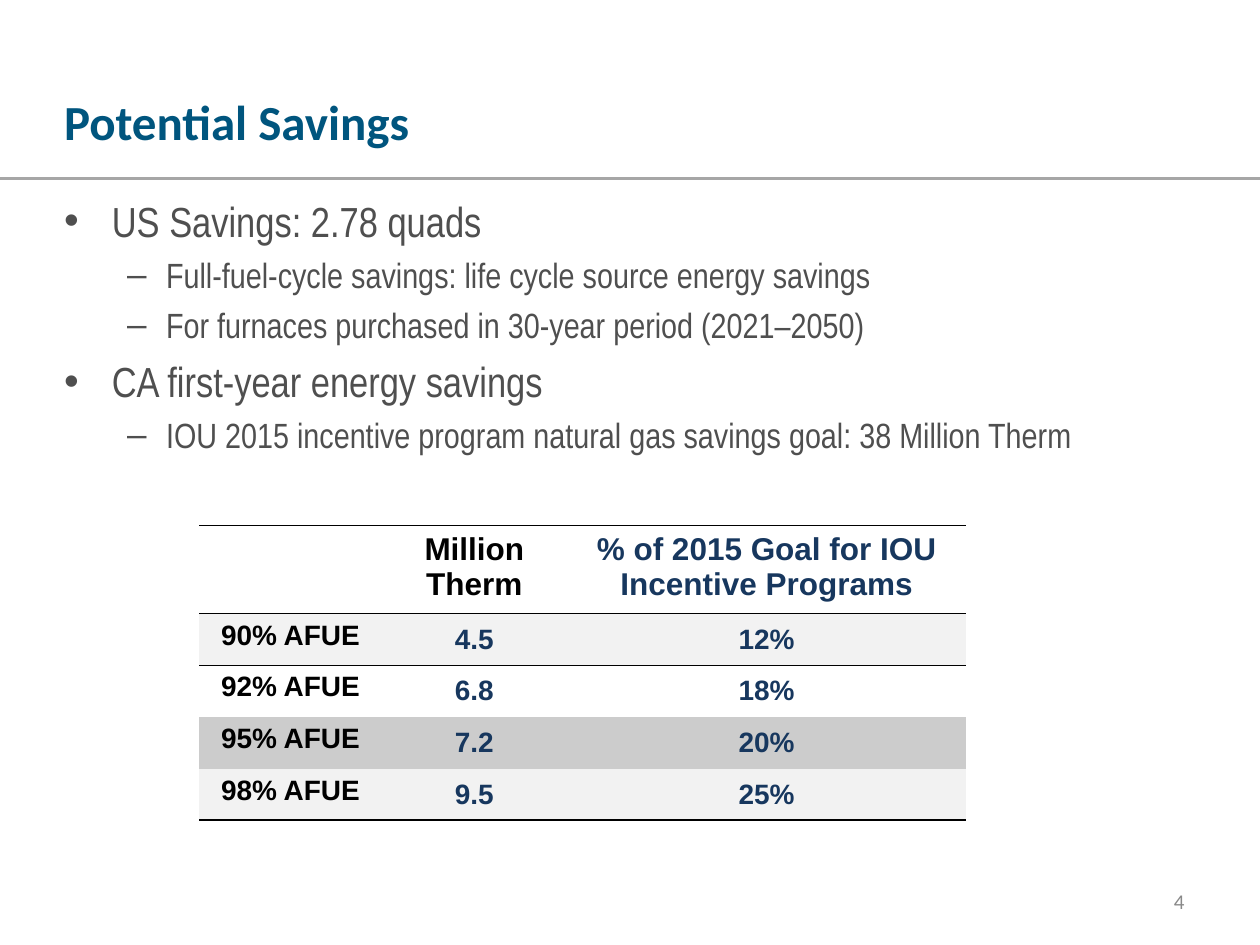
from pptx import Presentation
from pptx.dml.color import RGBColor
from pptx.enum.text import MSO_ANCHOR, PP_ALIGN
from pptx.oxml.ns import qn
from pptx.util import Inches, Pt
from lxml.etree import SubElement


def tint(code):
    return RGBColor.from_string(code)


def style(par, name, size, color, bold=False):
    look = {"name": name, "size": Pt(size), "bold": bold}
    for key, value in look.items():
        setattr(par.font, key, value)
    par.font.color.rgb = tint(color)


deck = Presentation()
deck.slide_width, deck.slide_height = Inches(10), Inches(7.5)
slide = deck.slides.add_slide(deck.slide_layouts[6])
shapes = slide.shapes

# Rule under the title
rule = shapes.add_connector(1, Inches(0), Inches(1.42), Inches(10), Inches(1.42))
rule.line.color.rgb = tint("A6A6A6")
rule.line.width = Pt(1.75)
SubElement(rule._element.spPr, qn("a:effectLst"))

# Title, body and page number boxes
frames = []
for left, top, width, height, anchor in [
    (0.41, 0.68, 7.79, 0.74, MSO_ANCHOR.TOP),
    (0.41, 1.5, 8.92, 4.95, MSO_ANCHOR.TOP),
    (7.17, 6.95, 2.33, 0.4, MSO_ANCHOR.MIDDLE),
]:
    box = shapes.add_textbox(Inches(left), Inches(top), Inches(width), Inches(height))
    box.text_frame.word_wrap = True
    box.text_frame.vertical_anchor = anchor
    frames.append(box.text_frame)
title, body, page = frames

title.text = "Potential Savings"
style(title.paragraphs[0], "Calibri", 28, "00557E", True)
page.text = "4"
page.paragraphs[0].alignment = PP_ALIGN.RIGHT
style(page.paragraphs[0], "Calibri", 12, "898989")

# Bullets: margin, hang, mark, size, space before
levels = [(0.38, 0.38, "•", 24, 5.5), (0.81, 0.31, "–", 20, 4.6)]
points = [
    (0, "US Savings: 2.78 quads"),
    (1, "Full-fuel-cycle savings: life cycle source energy savings"),
    (1, "For furnaces purchased in 30-year period (2021–2050)"),
    (0, "CA first-year energy savings"),
    (1, "IOU 2015 incentive program natural gas savings goal: 38 Million Therm"),
]
for i, (level, text) in enumerate(points):
    margin, hang, mark, size, gap = levels[level]
    par = body.add_paragraph() if i else body.paragraphs[0]
    par.text = text
    par.level = level
    props = par._p.get_or_add_pPr()
    props.set("marL", str(Inches(margin)))
    props.set("indent", str(-Inches(hang)))
    SubElement(props, qn("a:buFont"), typeface="Arial")
    SubElement(props, qn("a:buChar"), char=mark)
    if i:
        par.space_before = Pt(gap)
    style(par, "Arial Narrow", size, "4F4F4F")

# Savings table
rows = [
    ("", "Million Therm", "% of 2015 Goal for IOU Incentive Programs"),
    ("90% AFUE", "4.5", "12%"),
    ("92% AFUE", "6.8", "18%"),
    ("95% AFUE", "7.2", "20%"),
    ("98% AFUE", "9.5", "25%"),
]
fills = [None, "F2F2F2", None, "CCCCCC", "F2F2F2"]
edges = {0: ("a:lnT", "a:lnB"), 1: ("a:lnT",), 4: ("a:lnB",)}
frame = shapes.add_table(5, 3, Inches(1.58), Inches(4.17), Inches(6.09), Inches(2.3))
table = frame.table
table.first_row = table.horz_banding = False
# Plain style without grid
table._tbl.tblPr.find(qn("a:tableStyleId")).text = "{2D5ABB26-0587-4C30-8999-92F81FD0307C}"
for col, width in zip(table.columns, (1.45, 1.47, 3.17)):
    col.width = Inches(width)

for r, row in enumerate(rows):
    table.rows[r].height = Inches(0.41 if r else 0.66)
    for c, text in enumerate(row):
        cell = table.cell(r, c)
        cell.text = text
        par = cell.text_frame.paragraphs[0]
        par.alignment = PP_ALIGN.CENTER
        dark = c == 0 or (r == 0 and c == 1)
        style(par, "Arial", 16 if r else 18, "000000" if dark else "17375E", True)
        cell.vertical_anchor = MSO_ANCHOR.MIDDLE if r and c else MSO_ANCHOR.TOP
        for tag in edges.get(r, ()):
            line = SubElement(cell._tc.get_or_add_tcPr(), qn(tag), w=str(Pt(1)))
            solid = SubElement(line, qn("a:solidFill"))
            SubElement(solid, qn("a:srgbClr"), val="000000")
        if fills[r]:
            cell.fill.solid()
            cell.fill.fore_color.rgb = tint(fills[r])
        else:
            cell.fill.background()

deck.save("out.pptx")
